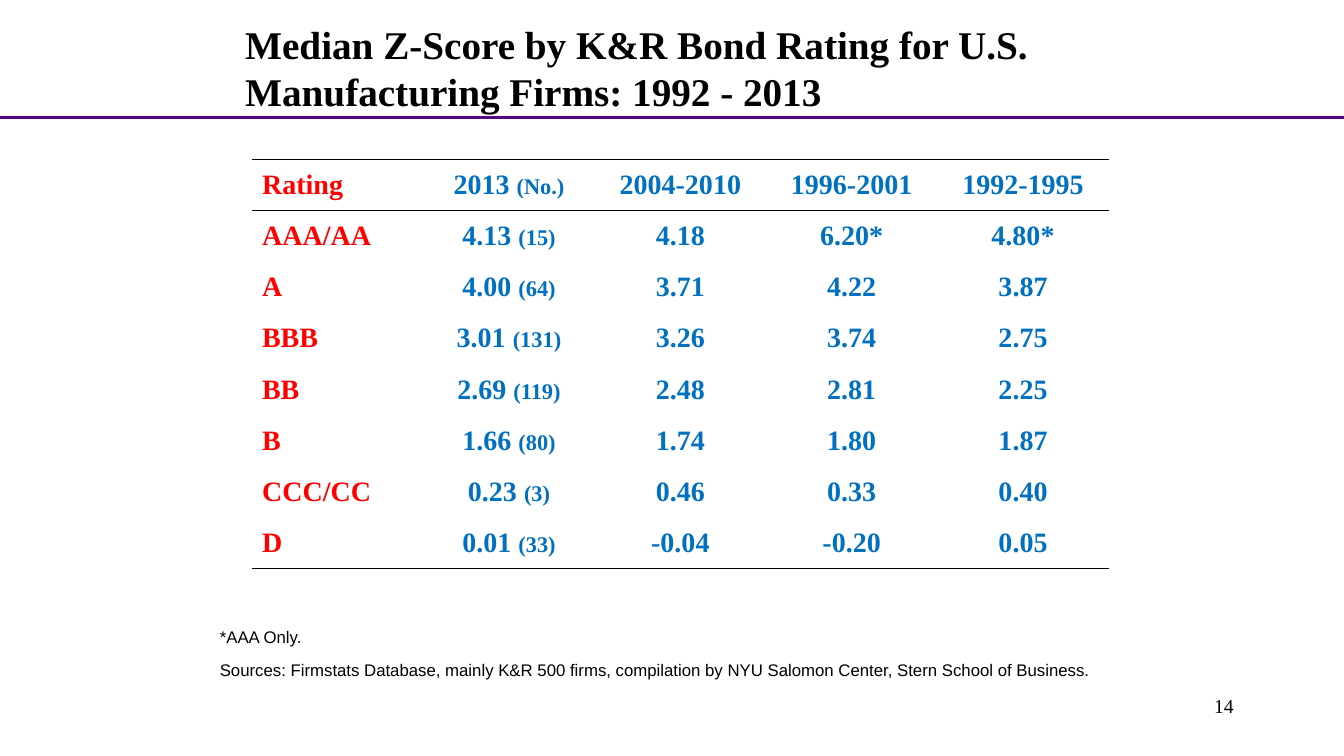
from dataclasses import dataclass

from lxml.etree import SubElement
from pptx import Presentation
from pptx.dml.color import RGBColor
from pptx.enum.shapes import MSO_CONNECTOR
from pptx.enum.text import MSO_ANCHOR, MSO_AUTO_SIZE, PP_ALIGN
from pptx.oxml import parse_xml
from pptx.oxml.ns import nsdecls, qn
from pptx.util import Cm, Pt


@dataclass(frozen=True)
class Theme:
    serif: str = "Times New Roman"
    sans: str = "Arial"
    text: str = "000000"
    rule: str = "57068C"
    rating: str = "FF0000"
    score: str = "0070C0"
    title_size: int = 28
    table_size: int = 20
    count_size: int = 16
    number_size: int = 14
    note_size: int = 12
    rule_width: float = 2.25
    border_width: float = 1


THEME = Theme()
NO_STYLE = "{2D5ABB26-0587-4C30-8999-92F81FD0307C}"

HEADER = ["Rating", "2013 (No.)", "2004-2010", "1996-2001", "1992-1995"]
SCORES = [
    ["AAA/AA", "4.13 (15)", "4.18", "6.20*", "4.80*"],
    ["A", "4.00 (64)", "3.71", "4.22", "3.87"],
    ["BBB", "3.01 (131)", "3.26", "3.74", "2.75"],
    ["BB", "2.69 (119)", "2.48", "2.81", "2.25"],
    ["B", "1.66 (80)", "1.74", "1.80", "1.87"],
    ["CCC/CC", "0.23 (3)", "0.46", "0.33", "0.40"],
    ["D", "0.01 (33)", "-0.04", "-0.20", "0.05"],
]


def add_run(p, text, color, **fmt):
    r = p.add_run()
    r.text = text
    r.font.color.rgb = RGBColor.from_string(color)
    for name, value in fmt.items():
        setattr(r.font, name, value)


def add_text(s, box, text, frame=None, align=PP_ALIGN.LEFT, **fmt):
    tf = s.shapes.add_textbox(*map(Cm, box)).text_frame
    for name, value in {"word_wrap": True, **(frame or {})}.items():
        setattr(tf, name, value)
    p = tf.paragraphs[0]
    p.alignment = align
    add_run(p, text, THEME.text, **fmt)


def add_heading(s, box, rule_width):
    left, top, width, height = box
    bottom = Cm(top + height)
    rule = s.shapes.add_connector(
        MSO_CONNECTOR.STRAIGHT, 0, bottom, rule_width, bottom)
    rule.line.color.rgb = RGBColor.from_string(THEME.rule)
    rule.line.width = Pt(THEME.rule_width)
    SubElement(rule._element.spPr, qn("a:effectLst"))
    add_text(s, box,
             "Median Z-Score by K&R Bond Rating for U.S. "
             "Manufacturing Firms: 1992 - 2013",
             {"vertical_anchor": MSO_ANCHOR.MIDDLE},
             name=THEME.serif, size=Pt(THEME.title_size), bold=True)


def add_border(cell, side, drawn):
    fill = (f'<a:solidFill><a:srgbClr val="{THEME.text}"/></a:solidFill>'
            if drawn else '<a:noFill/>')
    cell._tc.get_or_add_tcPr().insert(0, parse_xml(
        f'<a:{side} {nsdecls("a")} w="{Pt(THEME.border_width)}">'
        f'{fill}</a:{side}>'))


def fill_cell(cell, text, is_rating):
    cell.fill.background()
    cell.vertical_anchor = MSO_ANCHOR.MIDDLE
    p = cell.text_frame.paragraphs[0]
    p.alignment = PP_ALIGN.LEFT if is_rating else PP_ALIGN.CENTER
    color = THEME.rating if is_rating else THEME.score
    score, space, count = text.partition(" ")
    fmt = {"name": THEME.serif, "bold": True}
    add_run(p, score + space, color, size=Pt(THEME.table_size), **fmt)
    if count:
        add_run(p, count, color, size=Pt(THEME.count_size), **fmt)


def add_scores(s, box):
    rows = [HEADER, *SCORES]
    last = len(rows) - 1
    table = s.shapes.add_table(
        len(rows), len(HEADER), *map(Cm, box)).table
    table.first_row = table.horz_banding = False
    table._tbl.tblPr.find(qn("a:tableStyleId")).text = NO_STYLE
    for i, row in enumerate(rows):
        for j, text in enumerate(row):
            cell = table.cell(i, j)
            fill_cell(cell, text, j == 0)
            add_border(cell, "lnB", i in (0, last))
            add_border(cell, "lnT", i in (0, 1))


def add_notes(s, box):
    left, top, width, height = box
    line = height / 2
    notes = [
        ("*AAA Only.", True),
        ("Sources: Firmstats Database, mainly K&R 500 firms, compilation by "
         "NYU Salomon Center, Stern School of Business.", False),
    ]
    for i, (text, wrap) in enumerate(notes):
        add_text(s, (left, top + i * line, width, line), text,
                 {"word_wrap": wrap,
                  "auto_size": MSO_AUTO_SIZE.SHAPE_TO_FIT_TEXT},
                 name=THEME.sans, size=Pt(THEME.note_size))


def add_number(s, box):
    add_text(s, box, "14", align=PP_ALIGN.RIGHT,
             name=THEME.serif, size=Pt(THEME.number_size))


def main():
    prs = Presentation()
    prs.slide_width, prs.slide_height = Cm(33.87), Cm(19.05)
    s = prs.slides.add_slide(prs.slide_layouts[6])
    add_heading(s, (5.93, 0.43, 21.59, 2.54), prs.slide_width)
    add_scores(s, (6.35, 4.02, 21.59, 10.31))
    add_notes(s, (5.29, 15.66, 22.9, 1.68))
    add_number(s, (24.28, 17.36, 7.06, 1.27))
    prs.save("out.pptx")


if __name__ == "__main__":
    main()
